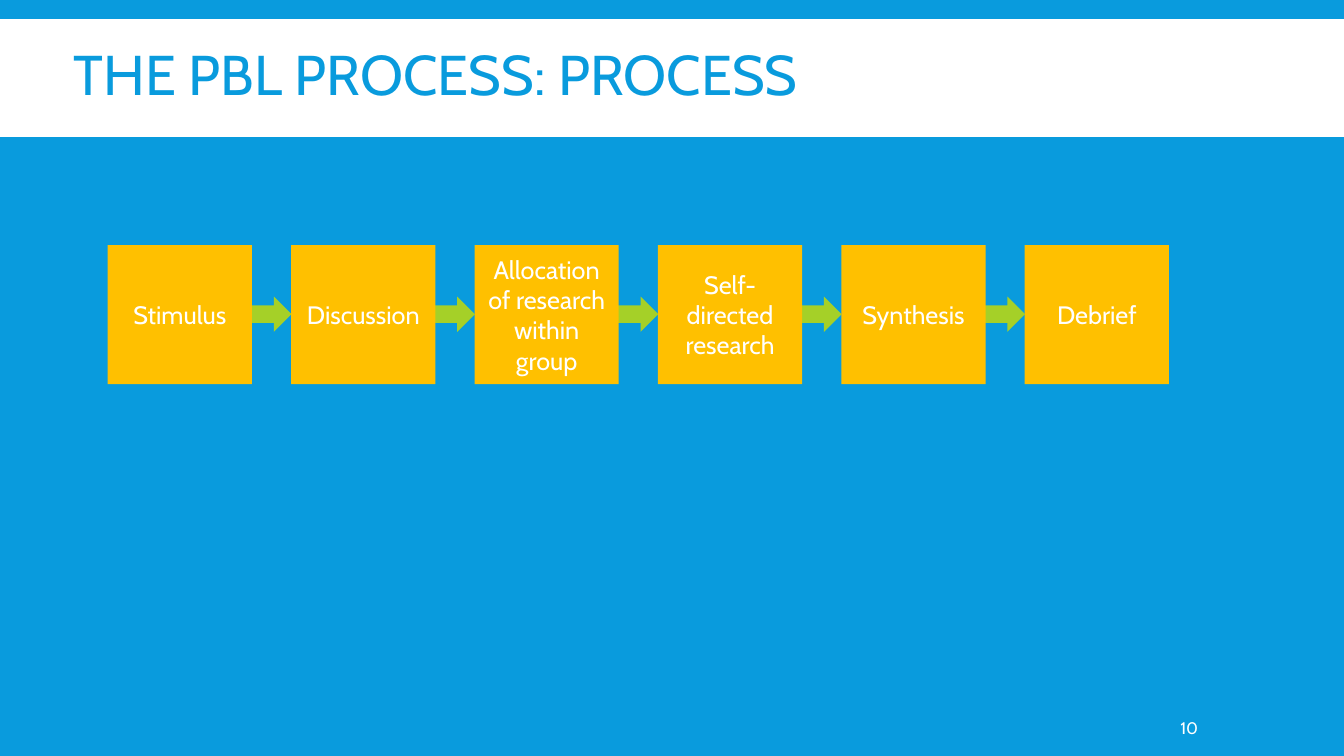
from typing import NamedTuple

from pptx import Presentation
from pptx.dml.color import RGBColor
from pptx.enum import shapes, text
from pptx.util import Pt

BLUE, WHITE, AMBER, GREEN = "099BDD", "FFFFFF", "FFC000", "A5D028"
FONT = "Cabin"


class Box(NamedTuple):
    left: float
    top: float
    width: float
    height: float

    def points(self) -> list:
        return [Pt(length) for length in self]


def paint(target, colour: str) -> None:
    """Give a fill or a font a solid colour."""
    if hasattr(target, "solid"):
        target.solid()
        target.fore_color.rgb = RGBColor.from_string(colour)
    else:
        target.color.rgb = RGBColor.from_string(colour)


def add_block(slide, preset, box: Box, colour: str):
    block = slide.shapes.add_shape(preset, *box.points())
    block.shadow.inherit = False
    paint(block.fill, colour)
    block.line.fill.background()
    return block


def write(frame, wording: str, size: float, colour: str, align) -> None:
    frame.word_wrap = True
    frame.auto_size = text.MSO_AUTO_SIZE.NONE
    frame.vertical_anchor = text.MSO_ANCHOR.MIDDLE
    paragraph = frame.paragraphs[0]
    paragraph.alignment = align
    run = paragraph.add_run()
    run.text = wording
    run.font.name, run.font.size = FONT, Pt(size)
    paint(run.font, colour)


STAGES = [
    "Stimulus",
    "Discussion",
    "Allocation of research within group",
    "Self-directed research",
    "Synthesis",
    "Debrief",
]
FIRST_STAGE = Box(77, 175, 103, 99.4)
FIRST_ARROW = Box(170, 211.8, 38.2, 25.2)
PITCH = 131


def shifted(box: Box, index: int) -> Box:
    return box._replace(left=box.left + index * PITCH)


def main() -> None:
    presentation = Presentation()
    presentation.slide_width, presentation.slide_height = Pt(960), Pt(540)
    slide = presentation.slides.add_slide(presentation.slide_layouts[5])
    paint(slide.background.fill, BLUE)

    # Title on its white band
    heading = slide.shapes.title
    heading.left, heading.top, heading.width, heading.height = Box(45.4, 21.6, 770.4, 68.4).points()
    write(heading.text_frame, "THE PBL PROCESS: PROCESS", 40, BLUE, text.PP_ALIGN.LEFT)
    heading.text_frame.paragraphs[0].line_spacing = 0.85
    band = add_block(slide, shapes.MSO_SHAPE.RECTANGLE, Box(0, 13.7, 960, 84.2), WHITE)
    heading.element.addprevious(band.element)

    # Arrows, tucked under the stages
    for index in range(len(STAGES) - 1):
        add_block(slide, shapes.MSO_SHAPE.RIGHT_ARROW, shifted(FIRST_ARROW, index), GREEN)

    # Stages of the process
    for index, wording in enumerate(STAGES):
        stage = add_block(slide, shapes.MSO_SHAPE.RECTANGLE, shifted(FIRST_STAGE, index), AMBER)
        write(stage.text_frame, wording, 18, WHITE, text.PP_ALIGN.CENTER)

    # Page number
    page_number = slide.shapes.add_textbox(*Box(839.5, 505.4, 74.2, 28.8).points()).text_frame
    page_number.margin_left = Pt(3.6)
    write(page_number, "10", 12, WHITE, text.PP_ALIGN.LEFT)

    presentation.save("out.pptx")


if __name__ == "__main__":
    main()
